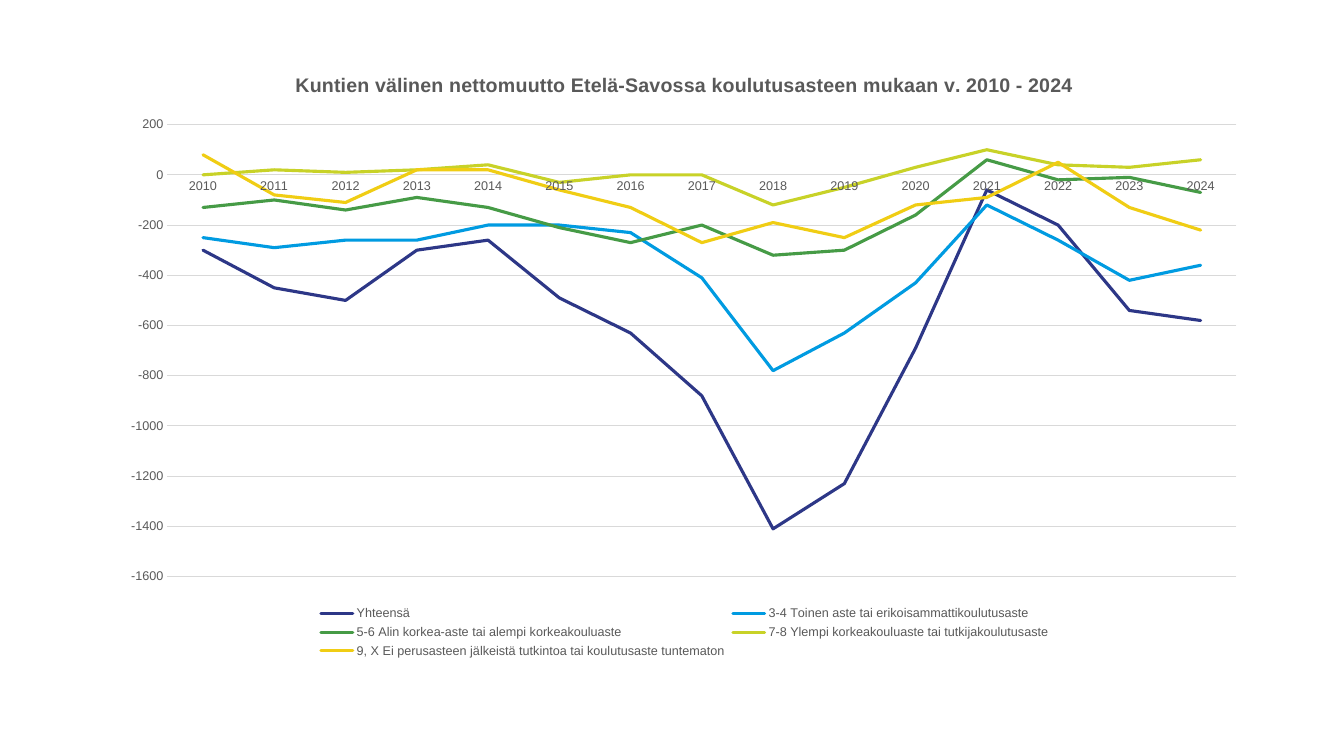
from dataclasses import dataclass

from pptx import Presentation
from pptx.chart.axis import CategoryAxis, ValueAxis
from pptx.chart.chart import Chart
from pptx.chart.data import CategoryChartData
from pptx.dml.color import RGBColor
from pptx.dml.line import LineFormat
from pptx.enum.chart import XL_CHART_TYPE, XL_LEGEND_POSITION, XL_MARKER_STYLE, XL_TICK_MARK
from pptx.oxml import parse_xml
from pptx.oxml.ns import nsdecls, qn
from pptx.text.text import Font
from pptx.util import Inches, Pt

LINE_CHART = XL_CHART_TYPE.LINE
LEGEND_BOTTOM = XL_LEGEND_POSITION.BOTTOM
NO_MARKER = XL_MARKER_STYLE.NONE
NO_TICK = XL_TICK_MARK.NONE

FONT_NAME = "Arial"
COLORS = {
    "text": "595959",
    "grid": "D9D9D9",
    "navy": "2D3787",
    "blue": "009BE1",
    "green": "469B46",
    "lime": "C8D228",
    "yellow": "F0CD14",
}
TITLE = "Kuntien välinen nettomuutto Etelä-Savossa koulutusasteen mukaan v. 2010 - 2024"
YEARS = [str(year) for year in range(2010, 2025)]
# Inner plot area as fractions of the chart
PLOT_AREA = {"x": 0.05, "y": 0.12, "w": 0.93, "h": 0.74}


@dataclass(frozen=True)
class EducationLevel:
    name: str
    color: str
    net_migration: tuple[int, ...]


LEVELS = [
    EducationLevel("Yhteensä", "navy", (
        -300, -450, -500, -300, -260, -490, -630, -880, -1410, -1230, -690, -60, -200, -540, -580)),
    EducationLevel("3-4 Toinen aste tai erikoisammattikoulutusaste", "blue", (
        -250, -290, -260, -260, -200, -200, -230, -410, -780, -630, -430, -120, -260, -420, -360)),
    EducationLevel("5-6 Alin korkea-aste tai alempi korkeakouluaste", "green", (
        -130, -100, -140, -90, -130, -210, -270, -200, -320, -300, -160, 60, -20, -10, -70)),
    EducationLevel("7-8 Ylempi korkeakouluaste tai tutkijakoulutusaste", "lime", (
        0, 20, 10, 20, 40, -30, 0, 0, -120, -50, 30, 100, 40, 30, 60)),
    EducationLevel("9, X Ei perusasteen jälkeistä tutkintoa tai koulutusaste tuntematon", "yellow", (
        80, -80, -110, 20, 20, -60, -130, -270, -190, -250, -120, -90, 50, -130, -220)),
]


def format_font(font: Font, size: float, bold: bool = False) -> None:
    font.name = FONT_NAME
    font.size = Pt(size)
    font.bold = bold
    font.color.rgb = RGBColor.from_string(COLORS["text"])


def format_line(line: LineFormat, color: str, width: float) -> None:
    line.color.rgb = RGBColor.from_string(COLORS[color])
    line.width = Pt(width)


def format_title(chart: Chart) -> None:
    chart.has_title = True
    run = chart.chart_title.text_frame.paragraphs[0].add_run()
    run.text = TITLE
    format_font(run.font, 14, bold=True)
    chart.chart_title.include_in_layout = False


def format_axis(axis: CategoryAxis | ValueAxis) -> None:
    axis.major_tick_mark = NO_TICK
    axis.minor_tick_mark = NO_TICK
    format_font(axis.tick_labels.font, 9)


def format_axes(chart: Chart) -> None:
    years, people = chart.category_axis, chart.value_axis
    format_axis(years)
    format_line(years.format.line, "grid", 0.75)
    format_axis(people)
    people.minimum_scale, people.maximum_scale, people.major_unit = -1600, 200, 200
    people.tick_labels.number_format = "0"
    people.tick_labels.number_format_is_linked = False
    people.format.line.fill.background()
    people.has_major_gridlines = True
    format_line(people.major_gridlines.format.line, "grid", 0.75)


def format_series(chart: Chart) -> None:
    for series, level in zip(chart.plots[0].series, LEVELS):
        series.smooth = False
        series.marker.style = NO_MARKER
        format_line(series.format.line, level.color, 2.25)
        series.format.line._get_or_add_ln().set("cap", "rnd")


def place_plot_area(chart: Chart) -> None:
    plot_area = chart._chartSpace.chart.plotArea
    for layout in plot_area.findall(qn("c:layout")):
        plot_area.remove(layout)
    modes = "".join(f'<c:{side}Mode val="edge"/>' for side in "xy")
    extents = "".join(f'<c:{key} val="{value}"/>' for key, value in PLOT_AREA.items())
    plot_area.insert(0, parse_xml(
        f'<c:layout {nsdecls("c")}><c:manualLayout><c:layoutTarget val="inner"/>'
        f"{modes}{extents}</c:manualLayout></c:layout>"))


def add_migration_chart(slide) -> None:
    data = CategoryChartData(number_format="0")
    data.categories = YEARS
    for level in LEVELS:
        data.add_series(level.name, level.net_migration)
    chart = slide.shapes.add_chart(
        LINE_CHART, Inches(1.09), Inches(0.51), Inches(11.4), Inches(6.06), data).chart
    format_font(chart.font, 10)
    chart.plots[0].vary_by_categories = False
    format_title(chart)
    format_axes(chart)
    format_series(chart)
    place_plot_area(chart)
    chart.has_legend = True
    chart.legend.position = LEGEND_BOTTOM
    chart.legend.include_in_layout = False
    format_font(chart.legend.font, 9)


def main() -> None:
    presentation = Presentation()
    presentation.slide_width = Inches(13.33)
    presentation.slide_height = Inches(7.5)
    blank_layout = presentation.slide_layouts[6]
    add_migration_chart(presentation.slides.add_slide(blank_layout))
    presentation.save("out.pptx")


if __name__ == "__main__":
    main()
